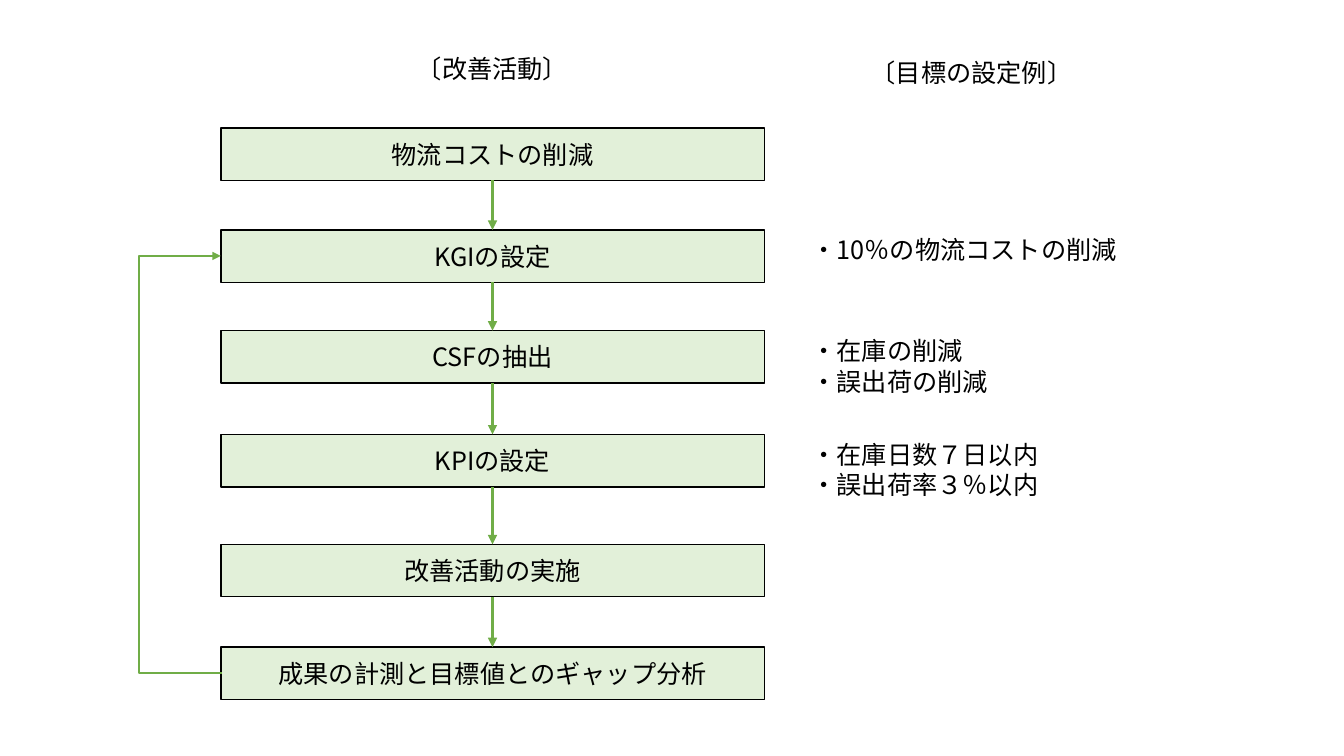
from dataclasses import dataclass

from lxml import etree
from pptx import Presentation
from pptx.dml.color import RGBColor
from pptx.enum.shapes import MSO_CONNECTOR, MSO_SHAPE
from pptx.enum.text import MSO_ANCHOR, MSO_AUTO_SIZE, PP_ALIGN
from pptx.oxml.ns import qn
from pptx.shapes.autoshape import Shape
from pptx.shapes.connector import Connector
from pptx.util import Inches, Pt

RECT = MSO_SHAPE.RECTANGLE
STRAIGHT, ELBOW = MSO_CONNECTOR.STRAIGHT, MSO_CONNECTOR.ELBOW
LEFT, CENTER = PP_ALIGN.LEFT, PP_ALIGN.CENTER
TOP, MIDDLE = MSO_ANCHOR.TOP, MSO_ANCHOR.MIDDLE
GROW = MSO_AUTO_SIZE.SHAPE_TO_FIT_TEXT

FONT = "Noto Sans CJK JP"
COLORS = {"ink": "000000", "box": "E2F0D9", "arrow": "70AD47"}
BOX_X, BOX_W, BOX_H = 2.19, 5.39, 0.52
NOTE_X, NOTE_W = 7.95, 3.34
LINE_H, PAD = 0.31, 0.1
LOOP_X = 1.37


@dataclass
class Step:
    top: float
    text: str
    goals: tuple[str, ...] = ()


@dataclass
class Title:
    left: float
    top: float
    width: float
    text: str


STEPS = [
    Step(1.27, "物流コストの削減"),
    Step(2.28, "KGIの設定", ("・10％の物流コストの削減",)),
    Step(3.28, "CSFの抽出", ("・在庫の削減", "・誤出荷の削減")),
    Step(4.31, "KPIの設定", ("・在庫日数７日以内", "・誤出荷率３％以内")),
    Step(5.4, "改善活動の実施"),
    Step(6.42, "成果の計測と目標値とのギャップ分析"),
]
TITLES = [
    Title(3.88, 0.48, 2.01, "〔改善活動〕"),
    Title(8.47, 0.52, 2.33, "〔目標の設定例〕"),
]


def color(name: str) -> RGBColor:
    return RGBColor.from_string(COLORS[name])


def write(shape: Shape, *lines: str, align=LEFT, anchor=TOP, size: int = 18) -> None:
    frame = shape.text_frame
    frame.word_wrap = True
    frame.vertical_anchor = anchor
    for i, line in enumerate(lines):
        para = frame.add_paragraph() if i else frame.paragraphs[0]
        para.alignment = align
        run = para.add_run()
        run.text = line
        run.font.size = Pt(size)
        run.font.color.rgb = color("ink")
        run.font.name = FONT
        # East Asian glyphs take their own typeface
        etree.SubElement(run.font._element, qn("a:ea"), typeface=FONT)


def add_box(shapes, step: Step) -> Shape:
    box = shapes.add_shape(RECT, Inches(BOX_X), Inches(step.top),
                           Inches(BOX_W), Inches(BOX_H))
    box.shadow.inherit = False
    box.fill.solid()
    box.fill.fore_color.rgb = color("box")
    box.line.color.rgb = color("ink")
    box.line.width = Pt(1)
    write(box, step.text, align=CENTER, anchor=MIDDLE)
    return box


def add_label(shapes, left: float, top: float, width: float,
              *lines: str, align=LEFT) -> None:
    label = shapes.add_textbox(Inches(left), Inches(top), Inches(width),
                               Inches(len(lines) * LINE_H + PAD))
    write(label, *lines, align=align)
    label.text_frame.auto_size = GROW


def style(link: Connector, width: float) -> None:
    link.line.color.rgb = color("arrow")
    link.line.width = Pt(width)
    etree.SubElement(link.line._get_or_add_ln(), qn("a:tailEnd"), type="triangle")
    etree.SubElement(link._element.spPr, qn("a:effectLst"))


def add_arrow(shapes, start: Shape, end: Shape) -> None:
    link = shapes.add_connector(STRAIGHT, 0, 0, 0, 0)
    link.begin_connect(start, 2)
    link.end_connect(end, 0)
    style(link, 2.25)


def add_loop(shapes, start: Step, end: Step) -> None:
    inset = 0.01
    from_x = BOX_X + inset
    link = shapes.add_connector(ELBOW, Inches(from_x), Inches(start.top + BOX_H / 2),
                                Inches(BOX_X), Inches(end.top + BOX_H / 2))
    # The bend lies left of both ends, as a share of the connector's width
    bend = round((from_x - LOOP_X) / inset * 100000)
    guides = link._element.spPr.find(qn("a:prstGeom")).get_or_add_avLst()
    etree.SubElement(guides, qn("a:gd"), name="adj1", fmla=f"val {bend}")
    style(link, 1.5)


def main() -> None:
    deck = Presentation()
    deck.slide_width, deck.slide_height = Inches(13.33), Inches(7.5)
    shapes = deck.slides.add_slide(deck.slide_layouts[6]).shapes

    # Steps and the arrows between them
    boxes = [add_box(shapes, step) for step in STEPS]
    for start, end in zip(boxes, boxes[1:]):
        add_arrow(shapes, start, end)

    # Headings and sample goals
    for title in TITLES:
        add_label(shapes, title.left, title.top, title.width, title.text, align=CENTER)
    for step in STEPS:
        if step.goals:
            add_label(shapes, NOTE_X, step.top, NOTE_W, *step.goals)

    # Feedback from the gap analysis to the KGI
    add_loop(shapes, STEPS[-1], STEPS[1])
    deck.save("out.pptx")


if __name__ == "__main__":
    main()
